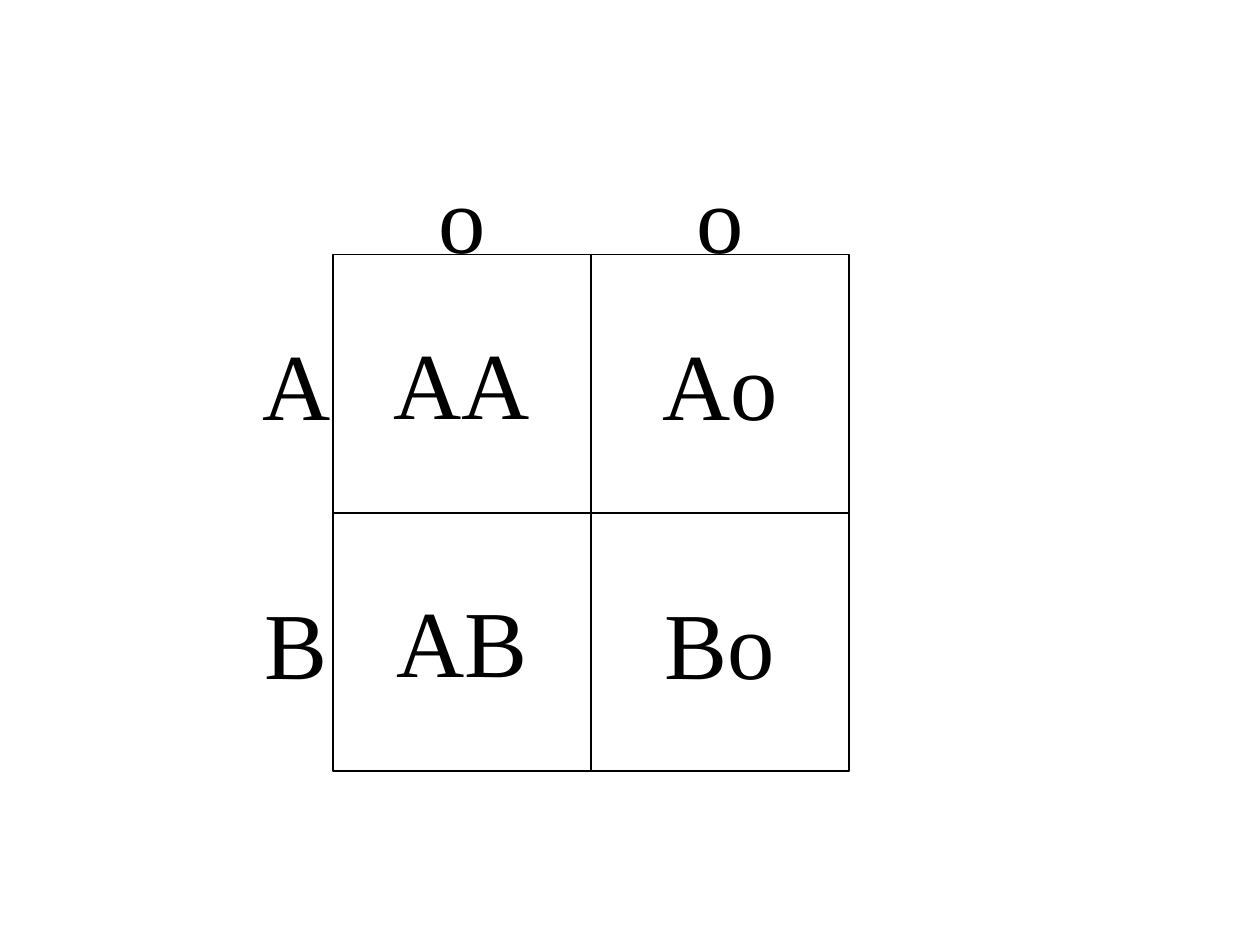
from pptx import Presentation
from pptx.dml.color import RGBColor
from pptx.enum.shapes import MSO_SHAPE
from pptx.enum.text import MSO_AUTO_SIZE, PP_ALIGN
from pptx.util import Inches, Pt

BLACK = RGBColor(0, 0, 0)
WHITE = RGBColor(255, 255, 255)
LEFT, TOP, SIDE = 2.64, 2.02, 2.05
HIGH = 1.01

deck = Presentation()
deck.slide_width = Inches(10)
deck.slide_height = Inches(7.5)
slide = deck.slides.add_slide(deck.slide_layouts[6])


def label(text, mid, top, width):
    box = slide.shapes.add_textbox(
        Inches(mid - width / 2), Inches(top), Inches(width), Inches(HIGH))
    frame = box.text_frame
    frame.word_wrap = True
    frame.auto_size = MSO_AUTO_SIZE.SHAPE_TO_FIT_TEXT
    frame.text = text
    line = frame.paragraphs[0]
    line.alignment = PP_ALIGN.CENTER
    font = line.runs[0].font
    font.name = "Times New Roman"
    font.size = Pt(54)
    font.color.rgb = BLACK


for row in range(2):
    for col in range(2):
        cell = slide.shapes.add_shape(
            MSO_SHAPE.RECTANGLE, Inches(LEFT + col * SIDE),
            Inches(TOP + row * SIDE), Inches(SIDE), Inches(SIDE))
        cell.shadow.inherit = False
        cell.fill.solid()
        cell.fill.fore_color.rgb = WHITE
        cell.line.color.rgb = BLACK
        cell.line.width = Pt(1)

mids = [LEFT + SIDE * (col + 0.5) for col in range(2)]
for mid in mids:
    label("o", mid, 1.21, 0.95)

rows = [("A", "AA", "Ao"), ("B", "AB", "Bo")]
for row, (gene, first, second) in enumerate(rows):
    top = 2.54 + row * SIDE
    label(gene, 2.35, top, 0.95)
    label(first, mids[0], top - 0.01, 1.38)
    label(second, mids[1], top, 1.66)

deck.save("out.pptx")
